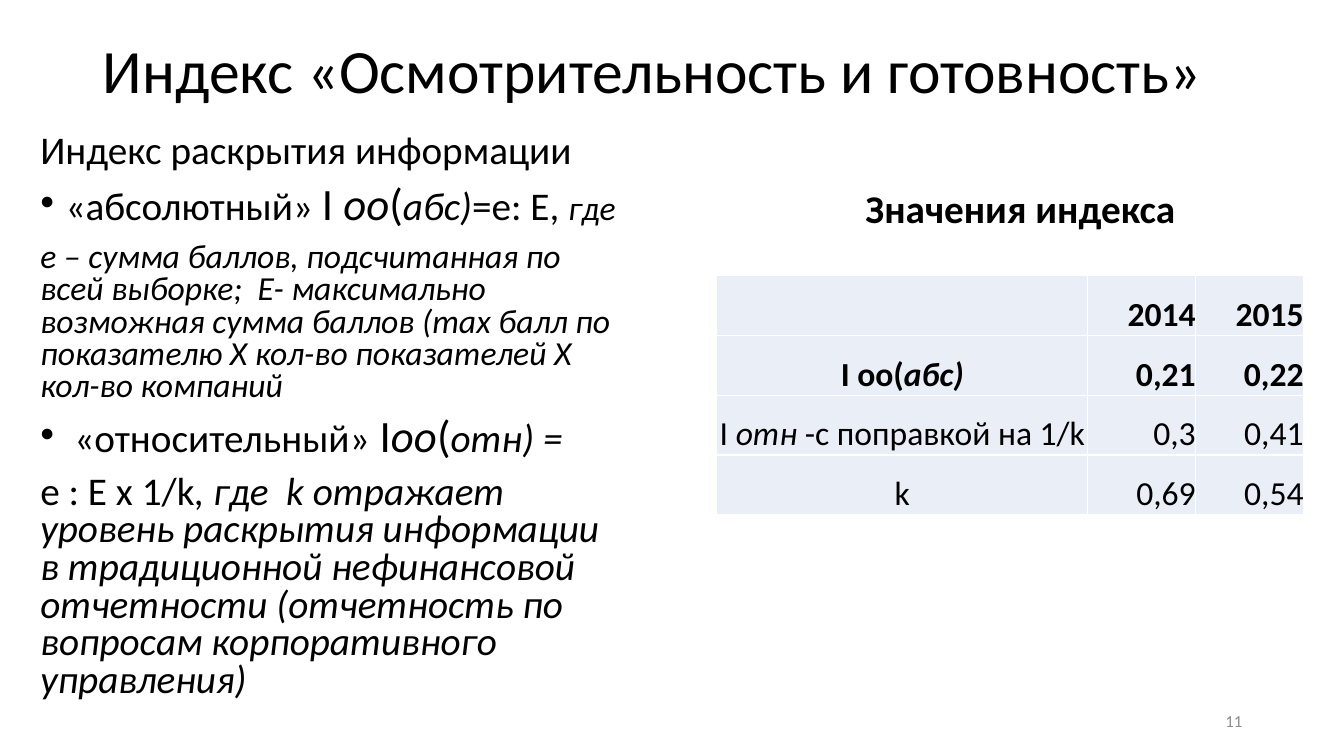
from lxml.etree import SubElement
from pptx import Presentation
from pptx.dml.color import RGBColor
from pptx.enum.text import MSO_ANCHOR as Anchor, MSO_AUTO_SIZE as AutoSize, PP_ALIGN as Align
from pptx.oxml.ns import qn
from pptx.util import Inches, Pt

FONT = "Calibri"
BLACK, GREY, WHITE, PALE_BLUE = "000000", "8C8C8C", "FFFFFF", "EAEFF7"

DEFINITIONS = [
    (False, [("Индекс раскрытия информации", 28, False)]),
    (True, [("«абсолютный» ", 28, False), ("I ", 32, False), ("oo", 32, True), ("(", 32, False),
            ("абс)", 28, True), ("=e: E, ", 28, False), ("где", 24, True)]),
    (False, [("e – cумма баллов, подсчитанная по всей выборке;  E- максимально возможная "
              "сумма баллов (max балл по показателю Х кол-во показателей Х кол-во компаний",
              24, True)]),
    (True, [(" «относительный»", 28, False), (" I", 32, False), ("oo", 32, True),
            ("(", 32, False), ("отн) =", 28, True)]),
    (False, [("e : E х 1/k", 28, False),
             (", где  k отражает уровень раскрытия информации в традиционной нефинансовой "
              "отчетности (отчетность по вопросам корпоративного управления)", 28, True)]),
]

INDEX_ROWS = [
    (True, [], "2014", "2015"),
    (True, [("I оо(", 24, False), ("абс)", 24, True)], "0,21", "0,22"),
    (False, [("I ", 24, False), ("отн", 24, True), (" -с поправкой на 1/k", 24, False)],
     "0,3", "0,41"),
    (False, [("k", 24, False)], "0,69", "0,54"),
]


def rgb(value):
    """Turn a hex string into a colour."""
    return RGBColor.from_string(value)


def write_runs(paragraph, pieces, bold=False, color=BLACK):
    """Add (text, size, italic) pieces to a paragraph as formatted runs."""
    for text, size, italic in pieces:
        run = paragraph.add_run()
        run.text = text
        font = run.font
        font.name, font.size, font.italic, font.bold = FONT, Pt(size), italic, bold
        font.color.rgb = rgb(color)


def place(holder, left, top, width, height, anchor=Anchor.TOP):
    """Move a text holder and return its wrapped, fixed-size text frame."""
    holder.left, holder.top = Inches(left), Inches(top)
    holder.width, holder.height = Inches(width), Inches(height)
    frame = holder.text_frame
    frame.word_wrap, frame.auto_size, frame.vertical_anchor = True, AutoSize.NONE, anchor
    return frame


def set_layout(paragraph, bulleted=False, align=Align.LEFT):
    """Set the spacing, alignment and bullet of a body paragraph."""
    paragraph.line_spacing, paragraph.space_before = 0.8, Pt(10)
    paragraph.space_after, paragraph.alignment = Pt(0), align
    properties = paragraph._p.get_or_add_pPr()
    indent = Inches(0.25) if bulleted else 0
    properties.set("marL", str(indent))
    properties.set("indent", str(-indent))
    if bulleted:
        SubElement(properties, qn("a:buFont"), typeface="Arial")
        SubElement(properties, qn("a:buChar"), char="•")
    else:
        SubElement(properties, qn("a:buNone"))


def add_title(slide):
    """Fill the title placeholder."""
    frame = place(slide.shapes.title, 0.92, 0, 11.5, 1.45, Anchor.MIDDLE)
    heading = frame.paragraphs[0]
    heading.alignment, heading.line_spacing = Align.LEFT, 0.9
    write_runs(heading, [("Индекс «Осмотрительность и готовность»", 44, False)])


def add_definitions(slide):
    """Fill the left body with the index definitions."""
    frame = place(slide.placeholders[1], 0.3, 1.28, 6.01, 6.07)
    for number, (bulleted, pieces) in enumerate(DEFINITIONS):
        definition = frame.add_paragraph() if number else frame.paragraphs[0]
        set_layout(definition, bulleted)
        write_runs(definition, pieces)


def add_table_caption(slide):
    """Fill the right body with the caption of the table."""
    caption = place(slide.placeholders[2], 6.91, 1.87, 6.42, 0.76).paragraphs[0]
    set_layout(caption, align=Align.CENTER)
    write_runs(caption, [("Значения индекса", 28, False)], bold=True)


def format_cell(cell, pieces, align, bold):
    """Write a table cell with white borders and a pale fill."""
    cell.margin_left = cell.margin_right = cell.margin_top = cell.margin_bottom = 0
    cell.vertical_anchor = Anchor.BOTTOM
    for side in ("lnL", "lnR", "lnT", "lnB"):
        border = SubElement(cell._tc.get_or_add_tcPr(), qn(f"a:{side}"), w=str(Pt(1)))
        SubElement(SubElement(border, qn("a:solidFill")), qn("a:srgbClr"), val=WHITE)
    cell.fill.solid()
    cell.fill.fore_color.rgb = rgb(PALE_BLUE)
    entry = cell.text_frame.paragraphs[0]
    entry.alignment = align
    write_runs(entry, pieces, bold)


def add_index_table(slide):
    """Add the table of index values by year."""
    table = slide.shapes.add_table(len(INDEX_ROWS), 3, Inches(7.11), Inches(2.73),
                                   Inches(5.82), Inches(2.38)).table
    table.first_row = table.horz_banding = False
    for column, width in zip(table.columns, (3.68, 1.07, 1.07)):
        column.width = Inches(width)
    for row, (bold, label, *values) in enumerate(INDEX_ROWS):
        format_cell(table.cell(row, 0), label, Align.CENTER, bold)
        for column, value in enumerate(values, 1):
            format_cell(table.cell(row, column), [(value, 24, False)], Align.RIGHT, bold)


def add_page_number(slide):
    """Add the page number at the bottom right."""
    area = 9.42, 6.95, 3, 0.4
    box = slide.shapes.add_textbox(*map(Inches, area))
    number = place(box, *area, Anchor.MIDDLE).paragraphs[0]
    number.alignment = Align.RIGHT
    write_runs(number, [("11", 12, False)], color=GREY)


def main():
    """Build and save the slide."""
    deck = Presentation()
    deck.slide_width, deck.slide_height = Inches(13.33), Inches(7.5)
    slide = deck.slides.add_slide(deck.slide_layouts[3])
    add_title(slide)
    add_definitions(slide)
    add_table_caption(slide)
    add_page_number(slide)
    add_index_table(slide)
    deck.save("out.pptx")


if __name__ == "__main__":
    main()
